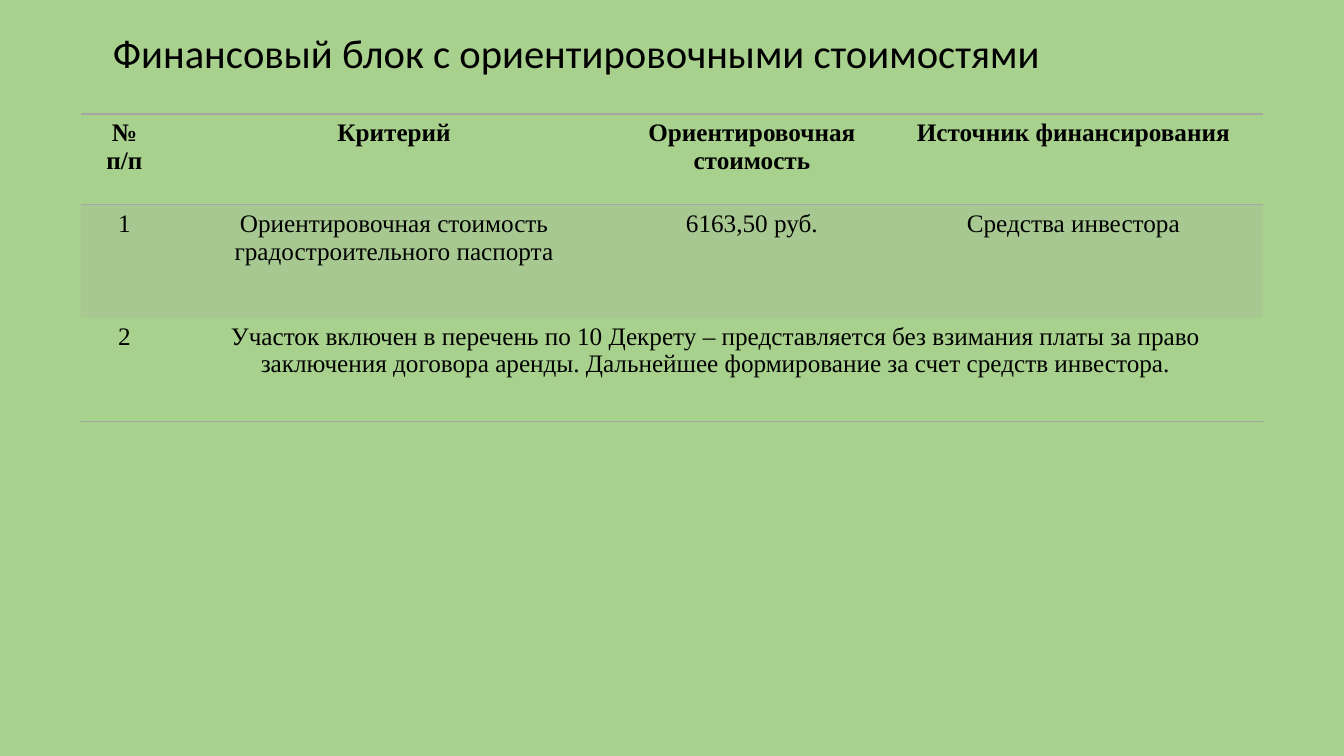
"""Build the slide with the table of estimated costs."""
from lxml import etree
from pptx import Presentation
from pptx.dml.color import RGBColor
from pptx.enum.text import MSO_ANCHOR, MSO_AUTO_SIZE, PP_ALIGN
from pptx.oxml.ns import qn
from pptx.util import Pt

TITLE = "Финансовый блок c ориентировочными стоимостями"
ROWS = [
    ["№ п/п", "Критерий", "Ориентировочная стоимость", "Источник финансирования"],
    ["1", "Ориентировочная стоимость градостроительного паспорта",
     "6163,50 руб.", "Средства инвестора"],
    ["2", "Участок включен в перечень по 10 Декрету – представляется без взимания "
     "платы за право заключения договора аренды. Дальнейшее формирование за счет "
     "средств инвестора."],
]
WIDTHS = [62.6, 322.6, 188.6, 270.7]
HEIGHTS = [64.8, 80.6, 74.2]
RULES = {0: ("a:lnT", "a:lnB"), 2: ("a:lnB",)}
SHADED = 1
PLAIN = "{2D5ABB26-0587-4C30-8999-92F81FD0307C}"

GREEN = RGBColor(0xA9, 0xD1, 0x8E)
GREY = RGBColor(0xA5, 0xA5, 0xA5)
BLACK = RGBColor(0, 0, 0)
CENTER, LEFT = PP_ALIGN.CENTER, PP_ALIGN.LEFT
MIDDLE, FIXED = MSO_ANCHOR.MIDDLE, MSO_AUTO_SIZE.NONE


def write(para, text, face, size, align, bold=False):
    para.alignment = align
    run = para.add_run()
    run.text = text
    font = run.font
    font.name, font.size, font.bold = face, Pt(size), bold
    font.color.rgb = BLACK


def rule(cell, tag):
    line = etree.SubElement(cell._tc.get_or_add_tcPr(), qn(tag), w=str(Pt(1)))
    fill = etree.SubElement(line, qn("a:solidFill"))
    etree.SubElement(fill, qn("a:srgbClr"), val=str(GREY))


def shade(cell):
    cell.fill.solid()
    cell.fill.fore_color.rgb = GREY
    color = cell._tc.tcPr.find(".//" + qn("a:srgbClr"))
    etree.SubElement(color, qn("a:alpha"), val="20000")


def add_title(slide):
    title = slide.shapes.title
    title.left, title.top = Pt(73.4), Pt(9.4)
    title.width, title.height = Pt(828), Pt(60.5)
    frame = title.text_frame
    frame.auto_size, frame.vertical_anchor = FIXED, MIDDLE
    para = frame.paragraphs[0]
    para.line_spacing = 0.9
    write(para, TITLE, "Calibri", 29, LEFT)


def add_costs(slide):
    frame = slide.shapes.add_table(len(ROWS), len(WIDTHS), Pt(57.6), Pt(81.4),
                                   Pt(sum(WIDTHS)), Pt(sum(HEIGHTS)))
    table = frame.table
    table.first_row = table.horz_banding = False
    table._tbl.tblPr.find(qn("a:tableStyleId")).text = PLAIN
    for col, width in zip(table.columns, WIDTHS):
        col.width = Pt(width)
    for row, height in zip(table.rows, HEIGHTS):
        row.height = Pt(height)
    table.cell(2, 1).merge(table.cell(2, 3))
    for r, texts in enumerate(ROWS):
        for c in range(len(WIDTHS)):
            cell = table.cell(r, c)
            cell.margin_left = cell.margin_right = Pt(9)
            for tag in RULES.get(r, ()):
                rule(cell, tag)
            if r == SHADED:
                shade(cell)
            else:
                cell.fill.background()
            if c < len(texts):
                write(cell.text_frame.paragraphs[0], texts[c],
                      "Times New Roman", 18, CENTER, r == 0)


def main():
    deck = Presentation()
    deck.slide_width, deck.slide_height = Pt(960), Pt(540)
    slide = deck.slides.add_slide(deck.slide_layouts[5])
    slide.background.fill.solid()
    slide.background.fill.fore_color.rgb = GREEN
    add_title(slide)
    add_costs(slide)
    deck.save("out.pptx")


if __name__ == "__main__":
    main()
